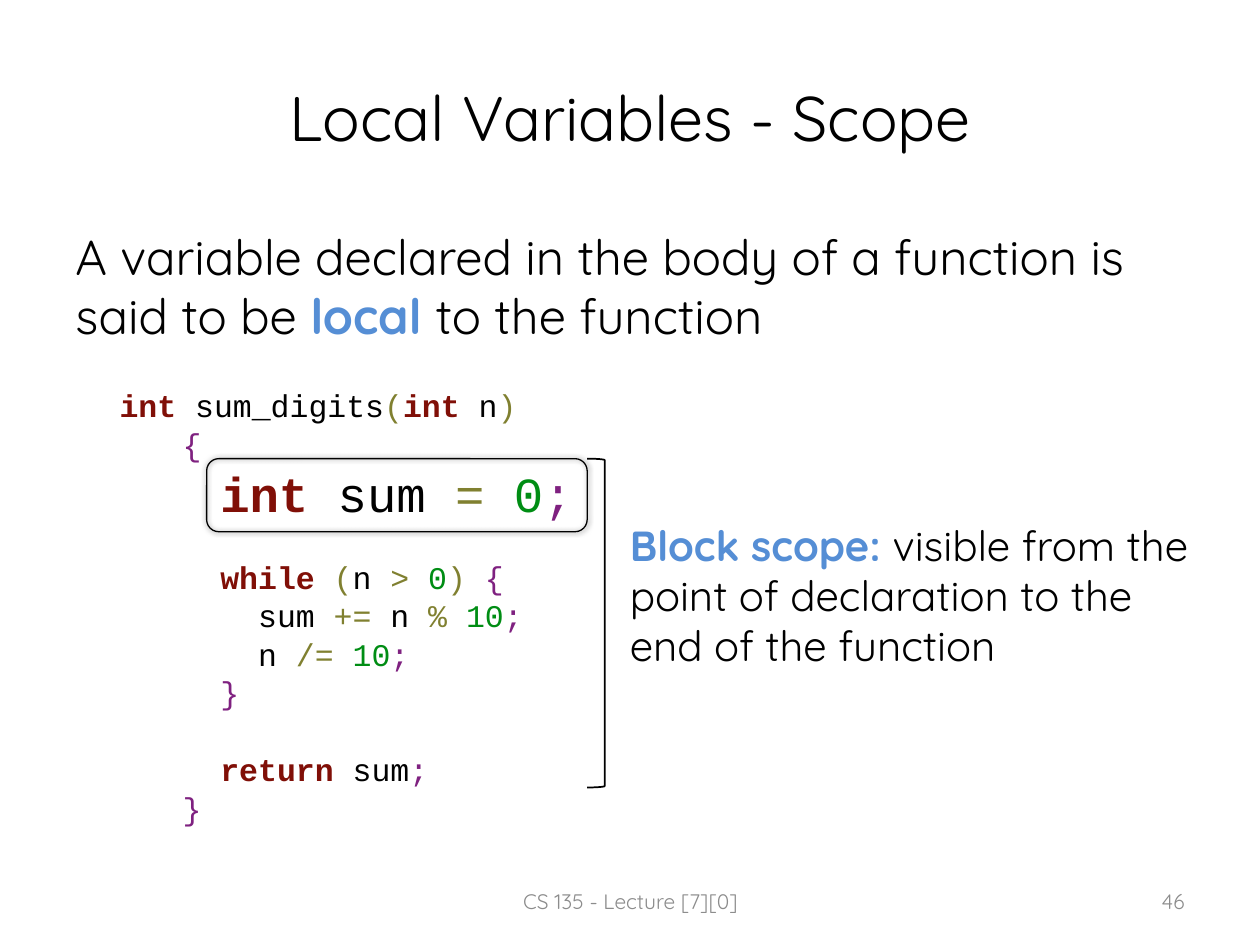
from lxml import etree
from pptx import Presentation
from pptx import util as u
from pptx.dml.color import RGBColor
from pptx.enum import shapes, text
from pptx.oxml import ns

BLACK = RGBColor(0x00, 0x00, 0x00)
BLUE = RGBColor(0x55, 0x8E, 0xD5)
GRAY = RGBColor(0x8C, 0x8C, 0x8C)
KEYWORD = RGBColor(0x80, 0x0F, 0x07)
OPERATOR = RGBColor(0x80, 0x80, 0x30)
NUMBER = RGBColor(0x00, 0x8D, 0x14)
BRACE = RGBColor(0x7F, 0x21, 0x80)
LEFT, CENTER, RIGHT = (text.PP_ALIGN.LEFT, text.PP_ALIGN.CENTER, text.PP_ALIGN.RIGHT)
TOP, MIDDLE = text.MSO_ANCHOR.TOP, text.MSO_ANCHOR.MIDDLE


class SlideBuilder:
    prose_font = "Quicksand"
    code_font = "Courier New"
    code_size = 18
    bold_colors = (BLUE, KEYWORD)

    def __init__(self, page):
        self.page = page

    def frame(self, place, anchor=TOP):
        box = self.page.shapes.add_textbox(*map(u.Inches, place))
        frame = box.text_frame
        frame.word_wrap = True
        frame.vertical_anchor = anchor
        return frame

    def add_spans(self, para, spans, font, size):
        for words, color in spans:
            span = para.add_run()
            span.text = words
            span.font.name = font
            span.font.size = u.Pt(size)
            span.font.bold = color in self.bold_colors
            span.font.color.rgb = color

    def prose(self, place, spans, size, align=LEFT, anchor=TOP):
        para = self.frame(place, anchor).paragraphs[0]
        para.alignment = align
        self.add_spans(para, spans, self.prose_font, size)

    def code(self, place, lines):
        frame = self.frame(place)
        for number, (indent, size, gap, spans) in enumerate(lines):
            para = frame.add_paragraph() if number else frame.paragraphs[0]
            properties = para._p.get_or_add_pPr()
            properties.set("marL", str(u.Inches(indent)))
            properties.set("indent", "0")
            para.line_spacing = u.Pt(size + 4)
            para.space_before = u.Pt(gap)
            self.add_spans(para, spans, self.code_font, size)

    def outline(self, kind, place, width, shadow=False):
        shape = self.page.shapes.add_shape(kind, *map(u.Inches, place))
        shape.fill.background()
        shape.line.color.rgb = BLACK
        shape.line.width = u.Pt(width)
        shape.shadow.inherit = False
        if shadow:
            effects = shape._element.spPr.find(ns.qn("a:effectLst"))
            outer = etree.SubElement(effects, ns.qn("a:outerShdw"), blurRad=str(u.Pt(3.1)),
                                     dist="0", dir="5400000", rotWithShape="0")
            color = etree.SubElement(outer, ns.qn("a:srgbClr"), val="000000")
            etree.SubElement(color, ns.qn("a:alpha"), val="60000")


def main():
    deck = Presentation()
    deck.slide_width, deck.slide_height = u.Inches(10), u.Inches(7.5)
    slide = SlideBuilder(deck.slides.add_slide(deck.slide_layouts[6]))

    # Frame around the declaration
    slide.outline(shapes.MSO_SHAPE.ROUNDED_RECTANGLE, (1.64, 3.64, 3.02, 0.58), 0.75, shadow=True)

    # Title and definition
    slide.prose((0.5, 0.3, 9, 1.25), [("Local Variables - Scope", BLACK)], 36, CENTER, MIDDLE)
    slide.prose((0.5, 1.75, 9, 1.1), [
        ("A variable declared in the body of a function is said to be ", BLACK),
        ("local ", BLUE), ("to the function", BLACK)], 28)

    # Code listing: indent, size, space before, spans
    size = slide.code_size
    function, block, loop = 0.5, 0.8, 1.1
    slide.code((0.85, 3.01, 8.42, 3.6), [
        (0, size, 0, [("int ", KEYWORD), ("sum_digits", BLACK), ("(", OPERATOR),
                      ("int", KEYWORD), (" n", BLACK), (")", OPERATOR)]),
        (function, size, 0, [("{", BRACE)]),
        (block, 28, 2, [("int", KEYWORD), (" sum ", BLACK), ("= ", OPERATOR),
                        ("0", NUMBER), (";", BRACE)]),
        (block, size, 20, [("while ", KEYWORD), ("(", OPERATOR), ("n ", BLACK), ("> ", OPERATOR),
                           ("0", NUMBER), (") ", OPERATOR), ("{", BRACE)]),
        (loop, size, 0, [("sum ", BLACK), ("+=", OPERATOR), (" n ", BLACK), ("% ", OPERATOR),
                         ("10", NUMBER), (";", BRACE)]),
        (loop, size, 0, [("n ", BLACK), ("/= ", OPERATOR), ("10", NUMBER), (";", BRACE)]),
        (block, size, 0, [("}", BRACE)]),
        (block, size, 22, [("return", KEYWORD), (" sum", BLACK), (";", BRACE)]),
        (function, size, 0, [("}", BRACE)]),
    ])

    # Scope bracket and its explanation
    slide.outline(shapes.MSO_SHAPE.RIGHT_BRACKET, (4.66, 3.64, 0.14, 2.61), 1)
    slide.prose((4.9, 4.07, 4.73, 1.31), [
        ("Block scope: ", BLUE),
        ("visible from the point of declaration to the end of the function", BLACK)], 24)

    # Footer
    slide.prose((3.42, 6.95, 3.17, 0.4), [("CS 135 - Lecture [7][0]", GRAY)], 12, CENTER, MIDDLE)
    slide.prose((7.17, 6.95, 2.33, 0.4), [("46", GRAY)], 12, RIGHT, MIDDLE)

    deck.save("out.pptx")


if __name__ == "__main__":
    main()
